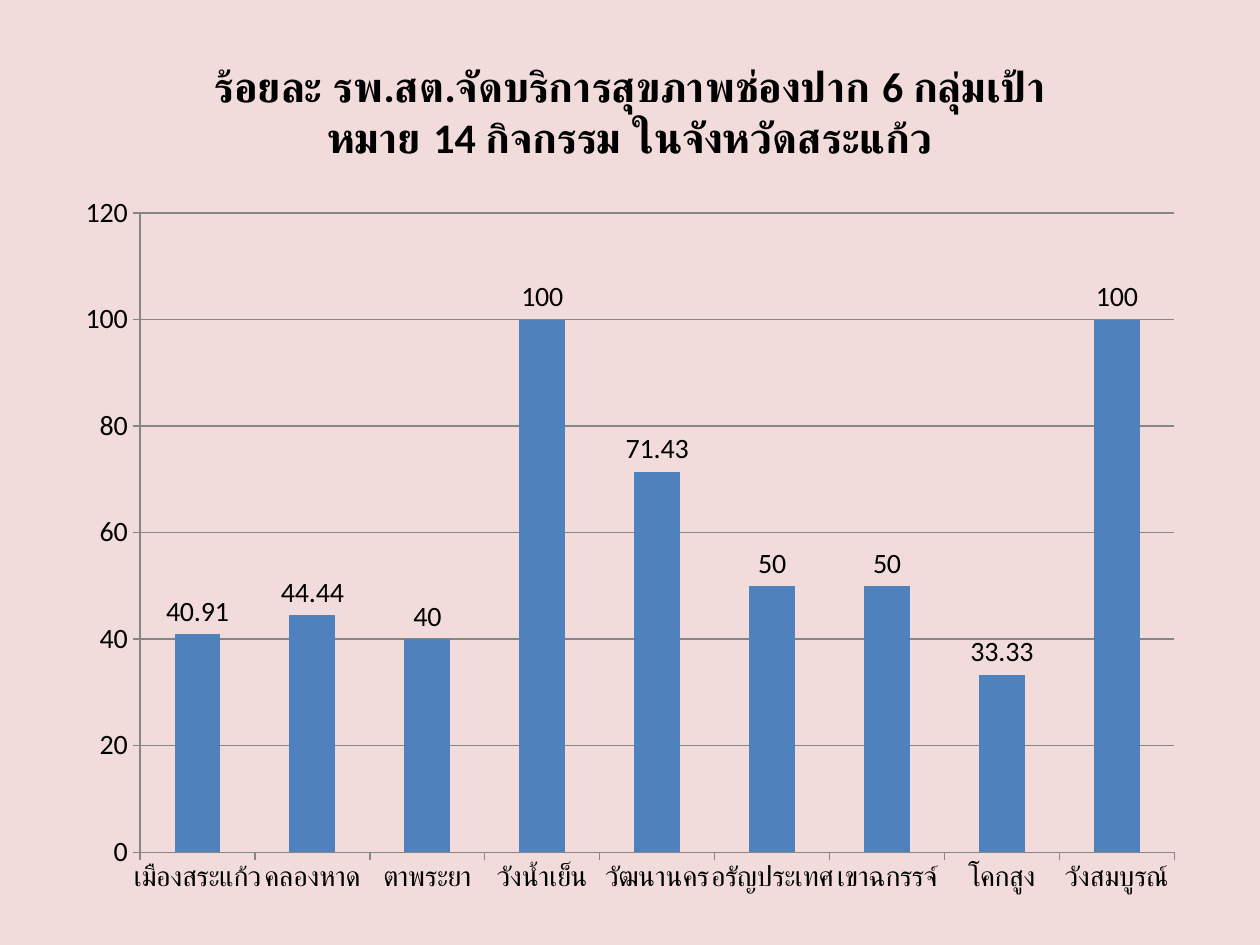
"""Build a slide with a column chart of oral health services by district."""
from pptx import Presentation
from pptx.chart.data import CategoryChartData
from pptx.dml.color import RGBColor
from pptx.enum.chart import XL_CHART_TYPE as ChartType
from pptx.enum.chart import XL_LABEL_POSITION as LabelPosition
from pptx.enum.chart import XL_TICK_MARK as TickMark
from pptx.util import Pt


def paint(fill, color):
    """Fill with a solid hex colour."""
    fill.solid()
    fill.fore_color.rgb = RGBColor.from_string(color)


TITLE = "ร้อยละ รพ.สต.จัดบริการสุขภาพช่องปาก 6 กลุ่มเป้าหมาย 14 กิจกรรม ในจังหวัดสระแก้ว"
SERVICE_RATES = {
    "เมืองสระแก้ว": 40.91,
    "คลองหาด": 44.44,
    "ตาพระยา": 40,
    "วังน้ำเย็น": 100,
    "วัฒนานคร": 71.43,
    "อรัญประเทศ": 50,
    "เขาฉกรรจ์": 50,
    "โคกสูง": 33.33,
    "วังสมบูรณ์": 100,
}

presentation = Presentation()
presentation.slide_width = Pt(720)
presentation.slide_height = Pt(540)
slide = presentation.slides.add_slide(presentation.slide_layouts[6])
paint(slide.background.fill, "F2DCDB")

chart_data = CategoryChartData()
chart_data.categories = list(SERVICE_RATES)
chart_data.add_series(TITLE, list(SERVICE_RATES.values()))
chart = slide.shapes.add_chart(
    ChartType.COLUMN_CLUSTERED, Pt(36), Pt(15), Pt(648), Pt(505), chart_data
).chart
chart.has_legend = False
chart.font.name = "Calibri"
chart.font.size = Pt(16)
paint(chart.font.fill, "000000")

chart.has_title = True
chart.chart_title.include_in_layout = False
title_frame = chart.chart_title.text_frame
title_frame.text = TITLE
title_font = title_frame.paragraphs[0].runs[0].font
title_font.name = "Calibri"
title_font.size = Pt(24)
title_font.bold = True
paint(title_font.fill, "000000")

for axis in (chart.category_axis, chart.value_axis):
    axis.major_tick_mark = TickMark.OUTSIDE
    axis.minor_tick_mark = TickMark.NONE
    paint(axis.format.line.fill, "868686")

value_axis = chart.value_axis
value_axis.minimum_scale = 0
value_axis.maximum_scale = 120
value_axis.major_unit = 20
value_axis.has_major_gridlines = True
paint(value_axis.major_gridlines.format.line.fill, "868686")

plot = chart.plots[0]
plot.gap_width = 150
plot.vary_by_categories = False
paint(plot.series[0].format.fill, "4F81BD")
plot.has_data_labels = True
plot.data_labels.show_value = True
plot.data_labels.position = LabelPosition.OUTSIDE_END

presentation.save("out.pptx")
